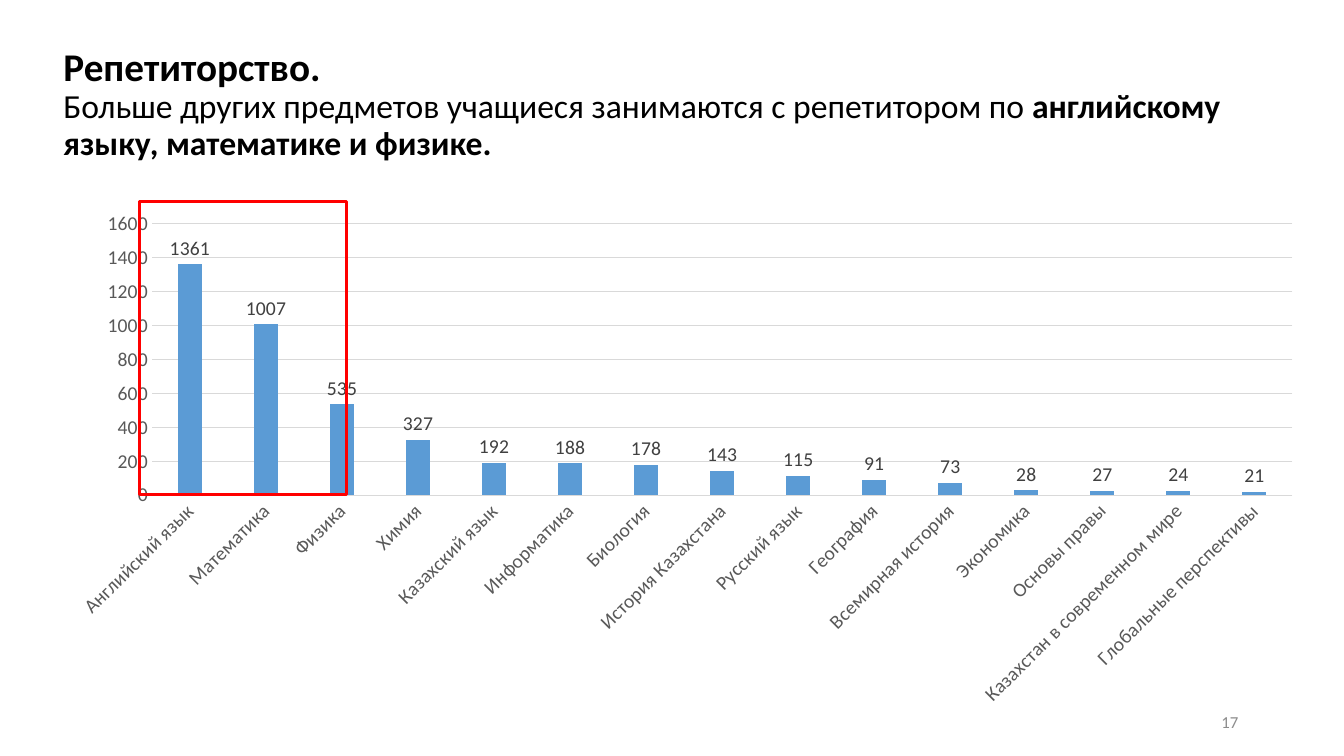
"""Build the tutoring slide: a title, a column chart of subjects and a highlight frame."""
from pptx import Presentation
from pptx.chart.data import CategoryChartData
from pptx.dml.color import RGBColor
from pptx.enum.chart import XL_CHART_TYPE, XL_LABEL_POSITION, XL_TICK_MARK
from pptx.enum.shapes import MSO_SHAPE
from pptx.enum.text import MSO_ANCHOR, PP_ALIGN
from pptx.util import Pt

PX = 9144
FONT = "Calibri"
SLIDE_SIZE = (1333, 750)
TITLE_BOX = (53, 33, 1254, 142)
NUMBER_BOX = (938, 696, 300, 40)
CHART_BOX = (53, 200, 1254, 511)
HIGHLIGHT_BOX = (138, 200, 206, 291)

TITLE_LINES = [
    [("Репетиторство. ", 28, True)],
    [("Больше других предметов учащиеся занимаются с репетитором по ", 24, False),
     ("английскому языку, математике и физике.", 24, True)],
]
PAGE_NUMBER = "17"
SUBJECTS = {
    "Английский язык": 1361,
    "Математика": 1007,
    "Физика": 535,
    "Химия": 327,
    "Казахский язык": 192,
    "Информатика": 188,
    "Биология": 178,
    "История Казахстана": 143,
    "Русский язык": 115,
    "География": 91,
    "Всемирная история": 73,
    "Экономика": 28,
    "Основы правы": 27,
    "Казахстан в современном мире": 24,
    "Глобальные перспективы": 21,
}


def color(value):
    return RGBColor.from_string(value)


def emu(box):
    return [length * PX for length in box]


def style_font(font, size, value, bold=False):
    font.name = FONT
    font.size = Pt(size)
    font.bold = bold
    font.color.rgb = color(value)


def style_line(line, value, width):
    line.color.rgb = color(value)
    line.width = Pt(width)


def add_text_box(slide, box):
    text_frame = slide.shapes.add_textbox(*emu(box)).text_frame
    text_frame.word_wrap = True
    text_frame.vertical_anchor = MSO_ANCHOR.MIDDLE
    return text_frame.paragraphs[0]


def add_title(slide):
    paragraph = add_text_box(slide, TITLE_BOX)
    paragraph.line_spacing = 0.9
    for index, line in enumerate(TITLE_LINES):
        if index:
            paragraph.add_line_break()
        for text, size, bold in line:
            run = paragraph.add_run()
            run.text = text
            style_font(run.font, size, "000000", bold)


def add_page_number(slide):
    paragraph = add_text_box(slide, NUMBER_BOX)
    paragraph.text = PAGE_NUMBER
    paragraph.alignment = PP_ALIGN.RIGHT
    style_font(paragraph.runs[0].font, 12, "8C8C8C")


def add_subject_chart(slide):
    data = CategoryChartData()
    data.categories = list(SUBJECTS)
    data.add_series("Series 1", list(SUBJECTS.values()))
    chart = slide.shapes.add_chart(
        XL_CHART_TYPE.COLUMN_CLUSTERED, *emu(CHART_BOX), data).chart
    chart.has_legend = False
    chart.has_title = False
    style_font(chart.font, 14, "000000")

    category_axis, value_axis = chart.category_axis, chart.value_axis
    for axis in (category_axis, value_axis):
        axis.major_tick_mark = XL_TICK_MARK.NONE
        axis.minor_tick_mark = XL_TICK_MARK.NONE
        style_font(axis.tick_labels.font, 14, "595959")
    style_line(category_axis.format.line, "D9D9D9", 0.75)
    category_axis._element.txPr.bodyPr.set("rot", "-2700000")
    value_axis.format.line.fill.background()
    style_line(value_axis.major_gridlines.format.line, "D9D9D9", 0.75)
    value_axis.minimum_scale = 0
    value_axis.maximum_scale = 1600
    value_axis.major_unit = 200

    plot = chart.plots[0]
    plot.gap_width = 219
    plot.overlap = -27
    plot.vary_by_categories = False
    series = plot.series[0]
    series.format.fill.solid()
    series.format.fill.fore_color.rgb = color("5B9BD5")
    labels = series.data_labels
    labels.show_value = True
    labels.position = XL_LABEL_POSITION.OUTSIDE_END
    style_font(labels.font, 14, "404040")


def add_highlight(slide):
    frame = slide.shapes.add_shape(MSO_SHAPE.RECTANGLE, *emu(HIGHLIGHT_BOX))
    frame.shadow.inherit = False
    frame.fill.background()
    style_line(frame.line, "FF0000", 2.25)


def main():
    presentation = Presentation()
    presentation.slide_width, presentation.slide_height = emu(SLIDE_SIZE)
    slide = presentation.slides.add_slide(presentation.slide_layouts[6])
    add_title(slide)
    add_page_number(slide)
    add_subject_chart(slide)
    add_highlight(slide)
    presentation.save("out.pptx")


if __name__ == "__main__":
    main()
